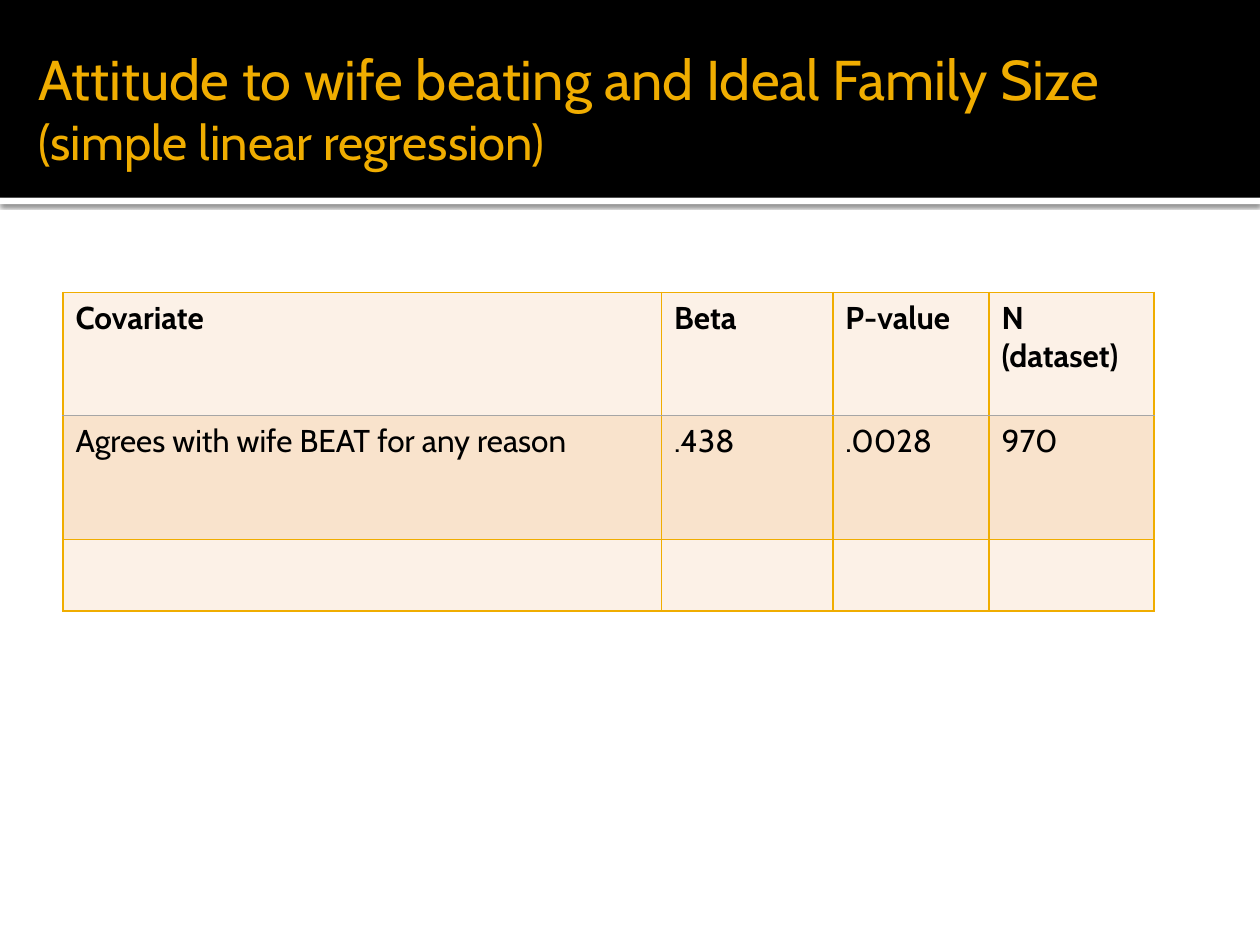
from lxml.etree import SubElement
from pptx import Presentation
from pptx.dml.color import RGBColor
from pptx.enum.shapes import MSO_SHAPE
from pptx.enum.text import MSO_ANCHOR
from pptx.oxml.ns import qn
from pptx.util import Inches, Pt

FONT = "Cabin"
COLORS = {
    "gold": "F0AD00",
    "black": "000000",
    "white": "FFFFFF",
    "light": "FCF1E7",
    "tint": "F9E3CC",
    "rule": "A6A6A6",
}
SLIDE_WIDTH, SLIDE_HEIGHT = 10, 7.5
HEADER_HEIGHT = 1.57
COLUMNS = [4.75, 1.36, 1.24, 1.31]
ROWS = [0.98, 0.98, 0.57]
CELLS = [
    ["Covariate", "Beta", "P-value", "N (dataset)"],
    ["Agrees with wife BEAT for any reason", ".438", ".0028", "970"],
    ["", "", "", ""],
]


def color(name):
    return RGBColor.from_string(COLORS[name])


def style(font, size, name, bold=False):
    font.name, font.size, font.bold = FONT, Pt(size), bold
    font.color.rgb = color(name)


def add_band(slide, box, fill):
    band = slide.shapes.add_shape(MSO_SHAPE.RECTANGLE, *map(Inches, box))
    band.shadow.inherit = False
    band.fill.solid()
    band.fill.fore_color.rgb = color(fill)
    band.line.fill.background()
    return band


def add_drop_shadow(shape):
    effects = shape.element.spPr.find(qn("a:effectLst"))
    shadow = SubElement(effects, qn("a:outerShdw"), blurRad=str(Pt(2.5)),
                        dist=str(Pt(0.8)), dir="5400000", rotWithShape="0")
    tone = SubElement(shadow, qn("a:srgbClr"), val=COLORS["black"])
    SubElement(tone, qn("a:alpha"), val="60000")


def add_header(slide, box):
    left, top, width, height = box
    # White strip with its shadow, then the black band
    add_drop_shadow(add_band(slide, (left, top + height, width, 0.05), "white"))
    add_band(slide, box, "black")

    # Title
    title = slide.shapes.add_textbox(Inches(left + 0.21), Inches(top + 0.17),
                                     Inches(width - 0.21), Inches(1.37))
    frame = title.text_frame
    frame.word_wrap = True
    frame.vertical_anchor = MSO_ANCHOR.MIDDLE
    frame.margin_right = Inches(0.05)
    para = frame.paragraphs[0]
    for text, size in (("Attitude to wife beating and Ideal Family Size ", 32),
                       ("(simple linear regression)", 28)):
        span = para.add_run()
        span.text = text
        style(span.font, size, "gold")


def add_borders(cell, row):
    properties = cell._tc.get_or_add_tcPr()
    # The rule under the heading row is thin and grey
    thin_edge = {0: "lnB", 1: "lnT"}.get(row)
    for position, edge in enumerate(("lnL", "lnR", "lnT", "lnB")):
        name, width = ("rule", 0.5) if edge == thin_edge else ("gold", 1)
        line = SubElement(properties, qn(f"a:{edge}"), w=str(Pt(width)))
        fill = SubElement(line, qn("a:solidFill"))
        SubElement(fill, qn("a:srgbClr"), val=COLORS[name])
        properties.insert(position, line)


def add_results_table(slide, box):
    frame = slide.shapes.add_table(len(ROWS), len(COLUMNS), *map(Inches, box))
    table = frame.table
    for column, width in zip(table.columns, COLUMNS):
        column.width = Inches(width)
    for row, (values, height) in enumerate(zip(CELLS, ROWS)):
        table.rows[row].height = Inches(height)
        for column, value in enumerate(values):
            cell = table.cell(row, column)
            cell.text_frame.text = value
            style(cell.text_frame.paragraphs[0].font, 18, "black", bold=row == 0)
            for span in cell.text_frame.paragraphs[0].runs:
                style(span.font, 18, "black", bold=row == 0)
            cell.fill.solid()
            cell.fill.fore_color.rgb = color("tint" if row % 2 else "light")
            add_borders(cell, row)


def main():
    deck = Presentation()
    deck.slide_width, deck.slide_height = Inches(SLIDE_WIDTH), Inches(SLIDE_HEIGHT)
    page = deck.slides.add_slide(deck.slide_layouts[6])
    add_header(page, (0, 0, SLIDE_WIDTH, HEADER_HEIGHT))
    add_results_table(page, (0.5, 2.32, sum(COLUMNS), sum(ROWS)))
    deck.save("out.pptx")


if __name__ == "__main__":
    main()
